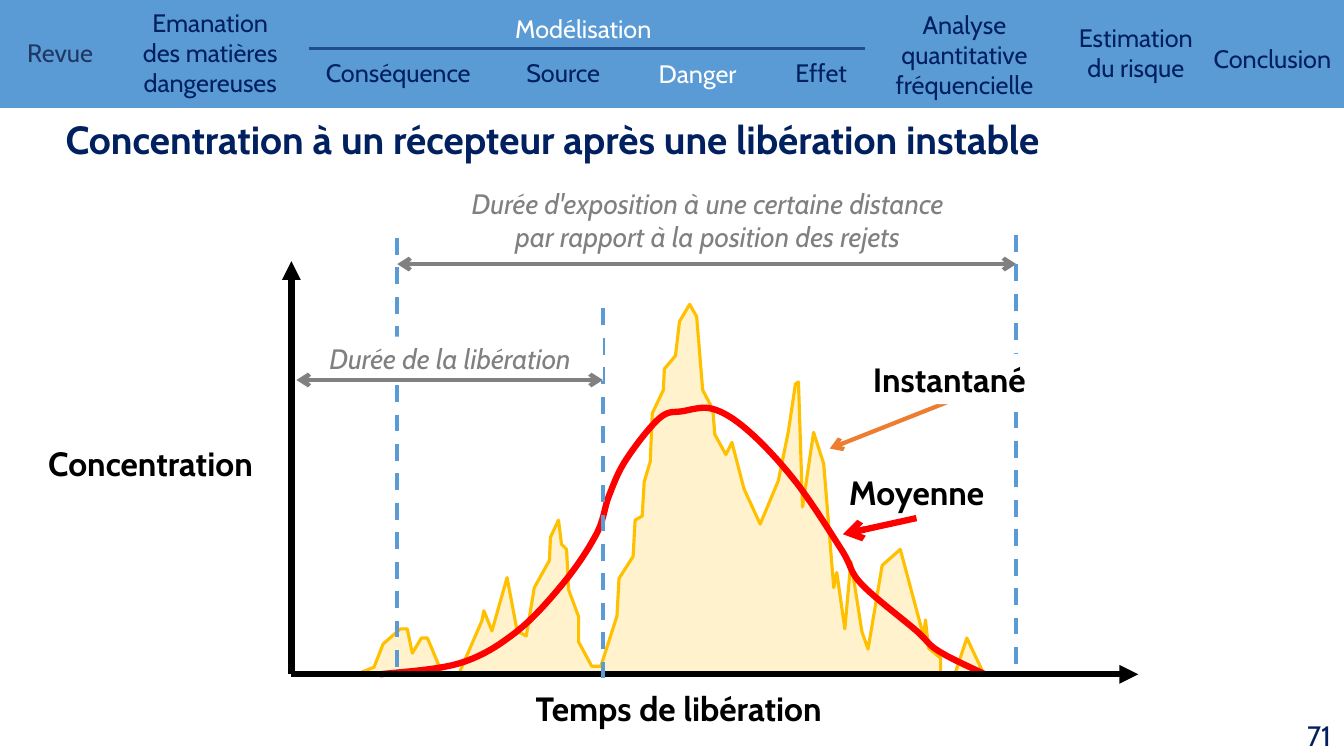
from dataclasses import dataclass

from lxml import etree
from pptx import Presentation
from pptx import util as u
from pptx.dml.color import RGBColor
from pptx.enum import dml, shapes, text
from pptx.oxml import ns

FONT = "Cabin"
NAVY = RGBColor.from_string("002060")
DARK_BLUE = RGBColor.from_string("203864")
RULE_BLUE = RGBColor.from_string("224D8C")
BLUE = RGBColor.from_string("5B9BD5")
WHITE = RGBColor.from_string("FFFFFF")
BLACK = RGBColor.from_string("000000")
GREY = RGBColor.from_string("808080")
RED = RGBColor.from_string("FF0000")
ORANGE = RGBColor.from_string("ED7D31")
GOLD = RGBColor.from_string("FFC000")
CREAM = RGBColor.from_string("FFF2CC")

LEFT, CENTER, RIGHT = text.PP_ALIGN.LEFT, text.PP_ALIGN.CENTER, text.PP_ALIGN.RIGHT
Point = tuple[float, float]


@dataclass
class Label:
    lines: list[str]
    at: tuple[float, float, float, float]
    size: int = 18
    color: RGBColor = NAVY
    align: text.PP_ALIGN = CENTER
    bold: bool = False
    italic: bool = False
    fill: RGBColor | None = None


@dataclass
class Stroke:
    start: Point
    end: Point
    color: RGBColor
    width: float
    tail: str = ""
    head: str = ""
    dashed: bool = False


def grid(value: float) -> u.Length:
    """Length of a number of grid units, each 2.54 cm wide."""
    return u.Cm(value * 2.54)


def write(box, label: Label) -> None:
    box.left, box.top, box.width, box.height = map(grid, label.at)
    frame = box.text_frame
    frame.word_wrap = True
    frame.auto_size = text.MSO_AUTO_SIZE.NONE
    frame.vertical_anchor = text.MSO_ANCHOR.TOP
    for index, line in enumerate(label.lines):
        para = frame.add_paragraph() if index else frame.paragraphs[0]
        para.alignment = label.align
        span = para.add_run()
        span.text = line
        font = span.font
        font.name, font.size = FONT, u.Pt(label.size)
        font.bold, font.italic = label.bold, label.italic
        font.color.rgb = label.color


def add_label(page, label: Label) -> None:
    box = page.shapes.add_textbox(*map(grid, label.at))
    if label.fill is not None:
        box.fill.solid()
        box.fill.fore_color.rgb = label.fill
    write(box, label)


def add_stroke(page, stroke: Stroke) -> None:
    line = page.shapes.add_connector(
        shapes.MSO_CONNECTOR.STRAIGHT, *map(grid, stroke.start + stroke.end))
    line.line.color.rgb = stroke.color
    line.line.width = u.Pt(stroke.width)
    if stroke.dashed:
        line.line.dash_style = dml.MSO_LINE.DASH
    outline = line._element.spPr.find(ns.qn("a:ln"))
    for tag, kind in (("a:headEnd", stroke.head), ("a:tailEnd", stroke.tail)):
        if kind:
            etree.SubElement(outline, ns.qn(tag), type=kind)
    etree.SubElement(line._element.spPr, ns.qn("a:effectLst"))


def add_curve(page, points: list[Point], color: RGBColor, width: float,
              fill: RGBColor | None = None) -> None:
    corners = [(grid(x), grid(y)) for x, y in points]
    builder = page.shapes.build_freeform(*corners[0])
    builder.add_line_segments(corners[1:], close=fill is not None)
    curve = builder.convert_to_shape()
    curve.shadow.inherit = False
    curve.line.color.rgb = color
    curve.line.width = u.Pt(width)
    if fill is None:
        curve.fill.background()
    else:
        curve.fill.solid()
        curve.fill.fore_color.rgb = fill


def smooth(knots: list[Point], steps: int = 10) -> list[Point]:
    """Points of a Catmull-Rom spline through the knots."""
    padded = [knots[0], *knots, knots[-1]]
    points = [knots[0]]
    for before, start, end, after in zip(padded, padded[1:], padded[2:], padded[3:]):
        for step in range(1, steps + 1):
            t = step / steps
            x, y = (b + t / 2 * (c - a + t * (2 * a - 5 * b + 4 * c - d
                                              + t * (3 * (b - c) + d - a)))
                    for a, b, c, d in zip(before, start, end, after))
            points.append((x, y))
    return points


NAVIGATION = [
    Label(["Revue"], (0.17, 0.32, 1.11, 0.4), color=DARK_BLUE, align=LEFT),
    Label(["Emanation des matières dangereuses"], (1.27, 0.02, 1.63, 1)),
    Label(["Modélisation"], (3.06, 0.08, 5.45, 0.4), color=WHITE),
    Label(["Conséquence"], (3.06, 0.52, 1.78, 0.4)),
    Label(["Source"], (4.59, 0.52, 1.99, 0.4)),
    Label(["Danger"], (6.1, 0.53, 1.64, 0.4), color=WHITE),
    Label(["Effet"], (7.27, 0.52, 1.75, 0.4)),
    Label(["Analyse quantitative fréquencielle"], (8.69, 0.04, 1.75, 0.96)),
    Label(["Estimation", "du risque"], (10.39, 0.17, 1.75, 0.69)),
    Label(["Conclusion"], (11.84, 0.38, 1.56, 0.43)),
]
TITLE = Label(["Concentration à un récepteur après une libération instable"],
              (0.55, 1.09, 12.26, 0.6), 28, align=LEFT, bold=True)
CHART_LABELS = [
    Label(["71"], (10.19, 7.08, 3.11, 0.4), 20, align=RIGHT),
    Label(["Concentration"], (0.38, 4.34, 2.6, 0.5), 24, BLACK, LEFT, bold=True),
    Label(["Temps de libération"], (2.94, 6.78, 7.58, 0.5), 24, BLACK, bold=True),
    Label(["Moyenne"], (8.32, 4.63, 1.74, 0.5), 24, BLACK, LEFT, bold=True),
    Label(["Durée d'exposition à une certaine distance",
           "par rapport à la position des rejets"],
          (3.23, 1.8, 7.58, 0.77), 20, GREY, italic=True),
]
MASKING_LABELS = [
    Label(["Instantané"], (8.56, 3.51, 2.07, 0.5), 24, BLACK, LEFT, bold=True, fill=WHITE),
    Label(["Durée de la libération"], (2.95, 3.34, 3.03, 0.44), 20, GREY,
          italic=True, fill=WHITE),
]
BASE = 6.69
ORIGIN = (2.89, BASE)
ARRIVAL, RELEASE_END, DEPARTURE = 3.94, 5.98, 10.08
STROKES = [
    Stroke(ORIGIN, (11.29, BASE), BLACK, 4.5, "triangle"),
    Stroke(ORIGIN, (2.89, 2.59), BLACK, 4.5, "triangle"),
    Stroke((9.09, 5.14), (8.36, 5.3), RED, 4.5, "arrow"),
    Stroke((9.42, 3.98), (8.23, 4.45), ORANGE, 3, "arrow"),
    Stroke((ARRIVAL, 2.62), (DEPARTURE, 2.62), GREY, 3, "arrow", "arrow"),
    Stroke((RELEASE_END, 3.06), (RELEASE_END, 6.73), BLUE, 3, dashed=True),
    Stroke((DEPARTURE, 2.33), (DEPARTURE, 6.66), BLUE, 3, dashed=True),
    Stroke((ARRIVAL, 2.36), (ARRIVAL, BASE), BLUE, 3, dashed=True),
]
RELEASE_SPAN = Stroke((2.94, 3.77), (RELEASE_END, 3.77), GREY, 3, "arrow", "arrow")

INSTANT = [
    (3.53, BASE), (3.71, 6.62), (3.8, 6.39), (3.97, 6.24), (4.04, 6.24), (4.09, 6.48),
    (4.18, 6.33), (4.24, 6.33), (4.39, BASE), (4.55, BASE), (4.78, 6.16), (4.8, 6.06),
    (4.88, 6.26), (5.03, 5.73), (5.13, 6.26), (5.22, 6.31), (5.3, 5.83), (5.45, 5.56),
    (5.46, 5.33), (5.54, 5.16), (5.57, 5.4), (5.62, 5.45), (5.64, 5.85), (5.74, 6.12),
    (5.74, 6.37), (5.87, 6.61), (5.96, 6.61), (6.12, 6.11), (6.14, 5.74), (6.28, 5.52),
    (6.3, 5.16), (6.37, 5.12), (6.39, 4.78), (6.45, 4.58), (6.47, 4.1), (6.58, 3.87),
    (6.59, 3.66), (6.7, 3.53), (6.74, 3.19), (6.84, 3.02), (6.91, 3.14), (6.97, 3.87),
    (7.07, 4.06), (7.09, 4.31), (7.2, 4.51), (7.26, 4.39), (7.38, 4.85), (7.54, 5.2),
    (7.72, 4.77), (7.82, 4.28), (7.89, 3.81), (7.92, 3.79), (7.96, 5.03), (8.07, 4.29),
    (8.17, 4.6), (8.27, 5.83), (8.3, 5.68), (8.38, 6.24), (8.44, 5.57), (8.55, 6.27),
    (8.61, 6.44), (8.75, 5.61), (8.93, 5.45), (9.16, 6.31), (9.18, 6.15), (9.21, 6.43),
    (9.33, 6.53), (9.33, BASE), (9.47, BASE), (9.59, 6.33), (9.76, BASE),
]
AVERAGE = [
    (3.77, BASE), (4.56, 6.58), (5.12, 6.27), (5.6, 5.77), (5.92, 5.29), (6.04, 4.92),
    (6.21, 4.56), (6.54, 4.15), (6.77, 4.08), (7.08, 4.06), (7.44, 4.29), (7.9, 4.79),
    (8.35, 5.46), (8.54, 5.79), (9.08, 6.25), (9.31, 6.46), (9.77, BASE),
]


def main() -> None:
    deck = Presentation()
    deck.slide_width, deck.slide_height = grid(13.33), grid(7.5)
    page = deck.slides.add_slide(deck.slide_layouts[5])
    write(page.shapes.title, TITLE)

    # Navigation band
    band = page.shapes.add_shape(shapes.MSO_SHAPE.RECTANGLE, 0, 0, deck.slide_width, grid(1.07))
    band.shadow.inherit = False
    band.fill.solid()
    band.fill.fore_color.rgb = BLUE
    band.line.fill.background()
    for label in NAVIGATION:
        add_label(page, label)
    add_stroke(page, Stroke((3.06, 0.48), (8.58, 0.48), RULE_BLUE, 2.25))

    # Concentration curves, axes and durations
    add_curve(page, INSTANT, GOLD, 2.25, CREAM)
    add_curve(page, smooth(AVERAGE), RED, 4.5)
    for label in CHART_LABELS:
        add_label(page, label)
    for stroke in STROKES:
        add_stroke(page, stroke)
    for label in MASKING_LABELS:
        add_label(page, label)
    add_stroke(page, RELEASE_SPAN)
    deck.save("out.pptx")


if __name__ == "__main__":
    main()
